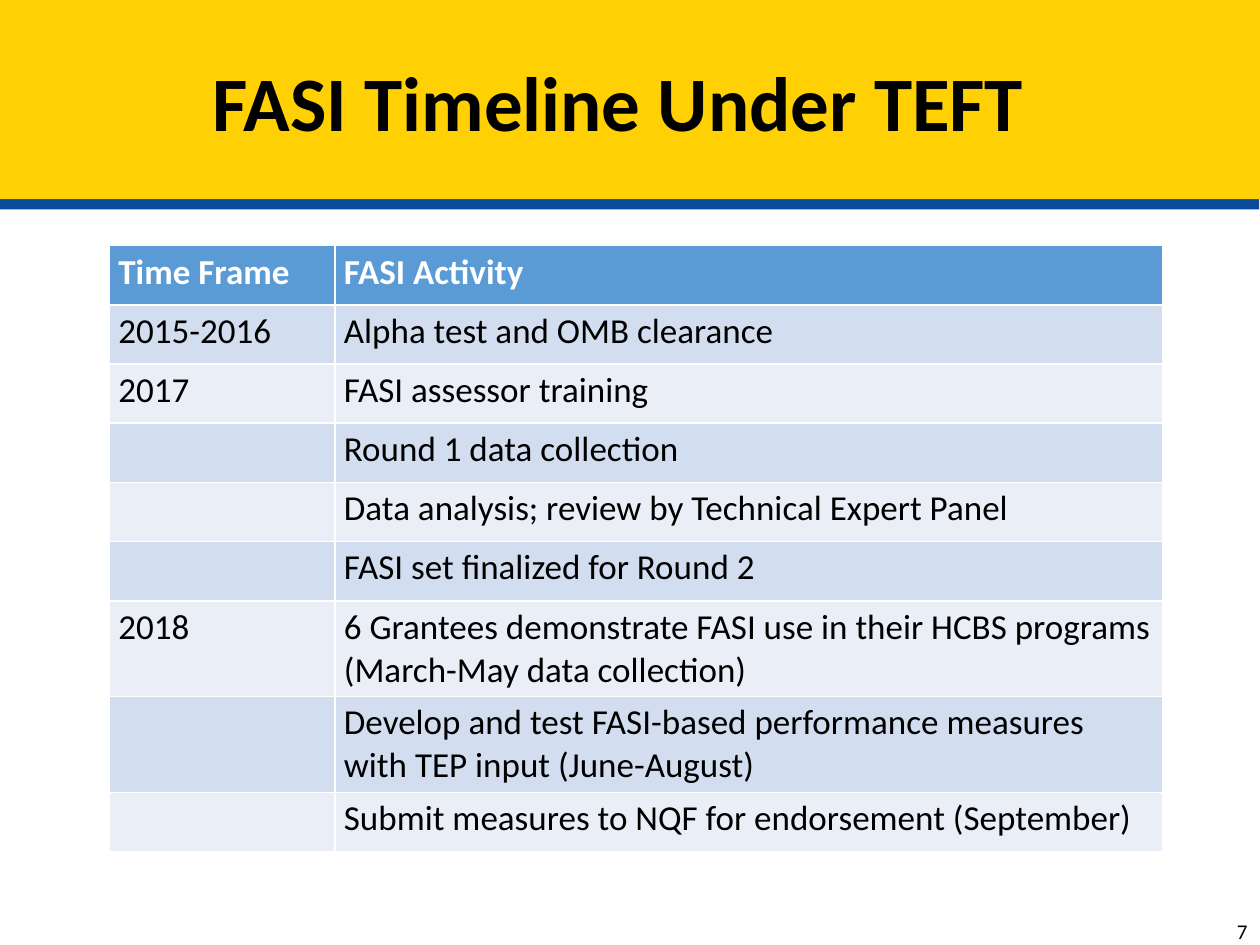
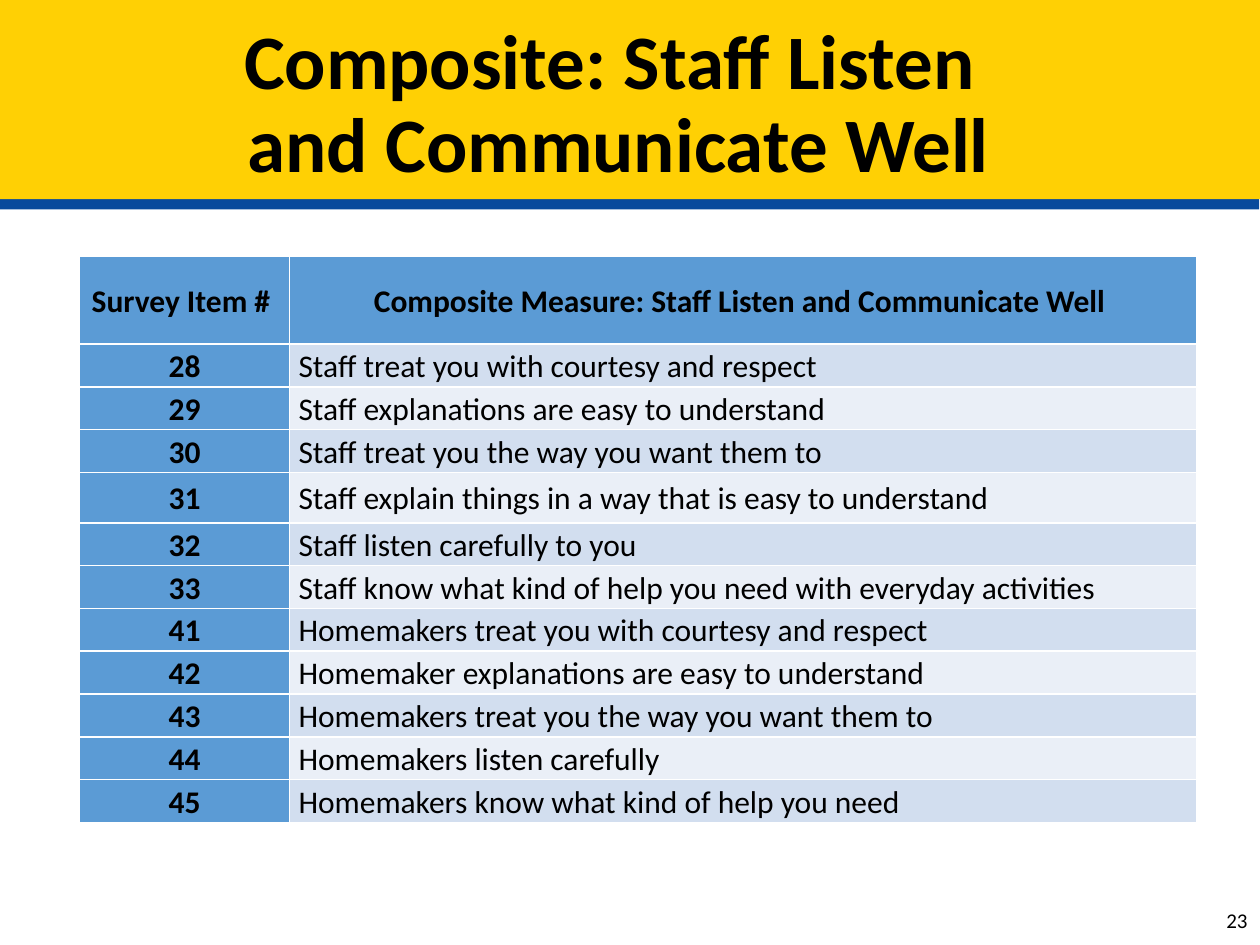
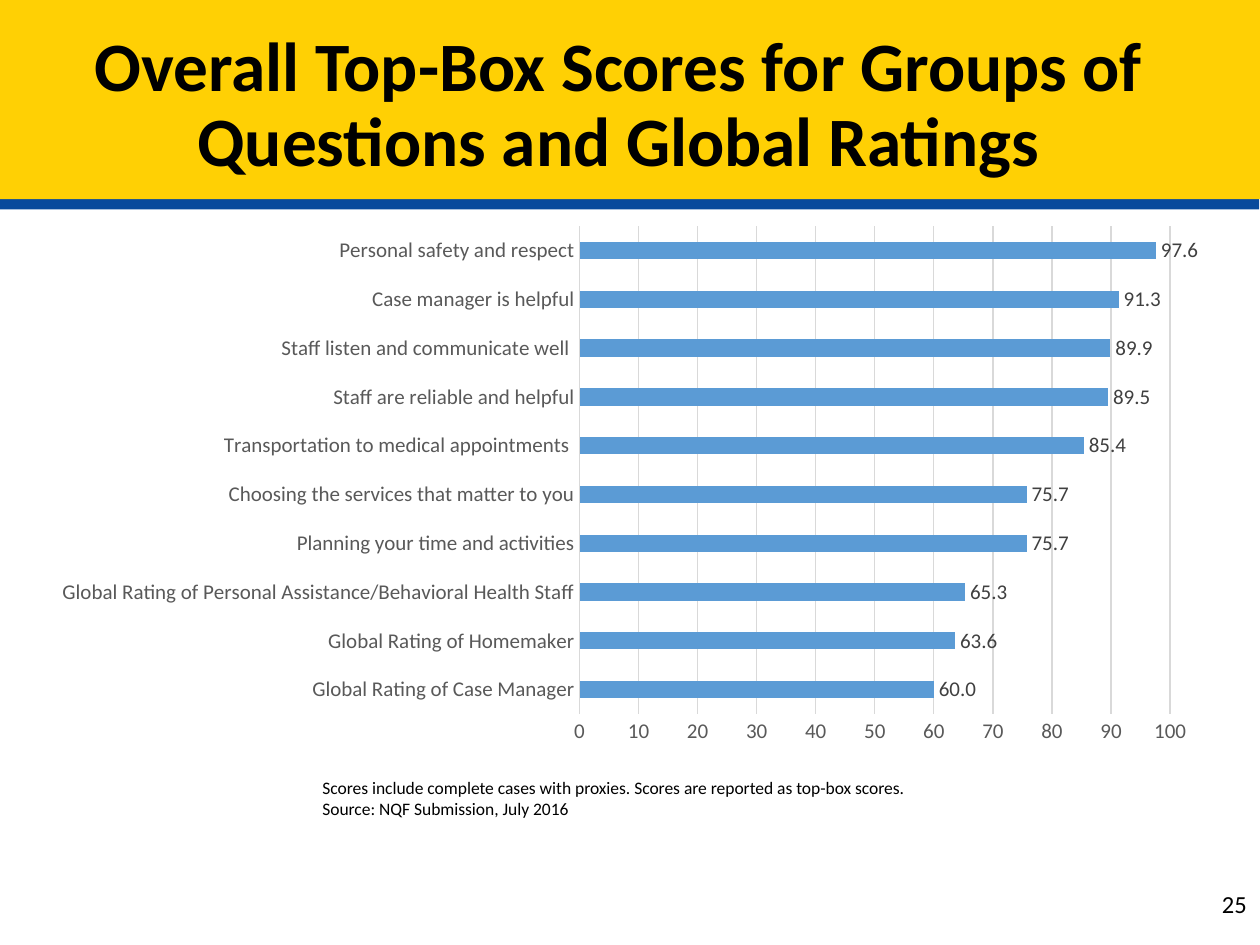
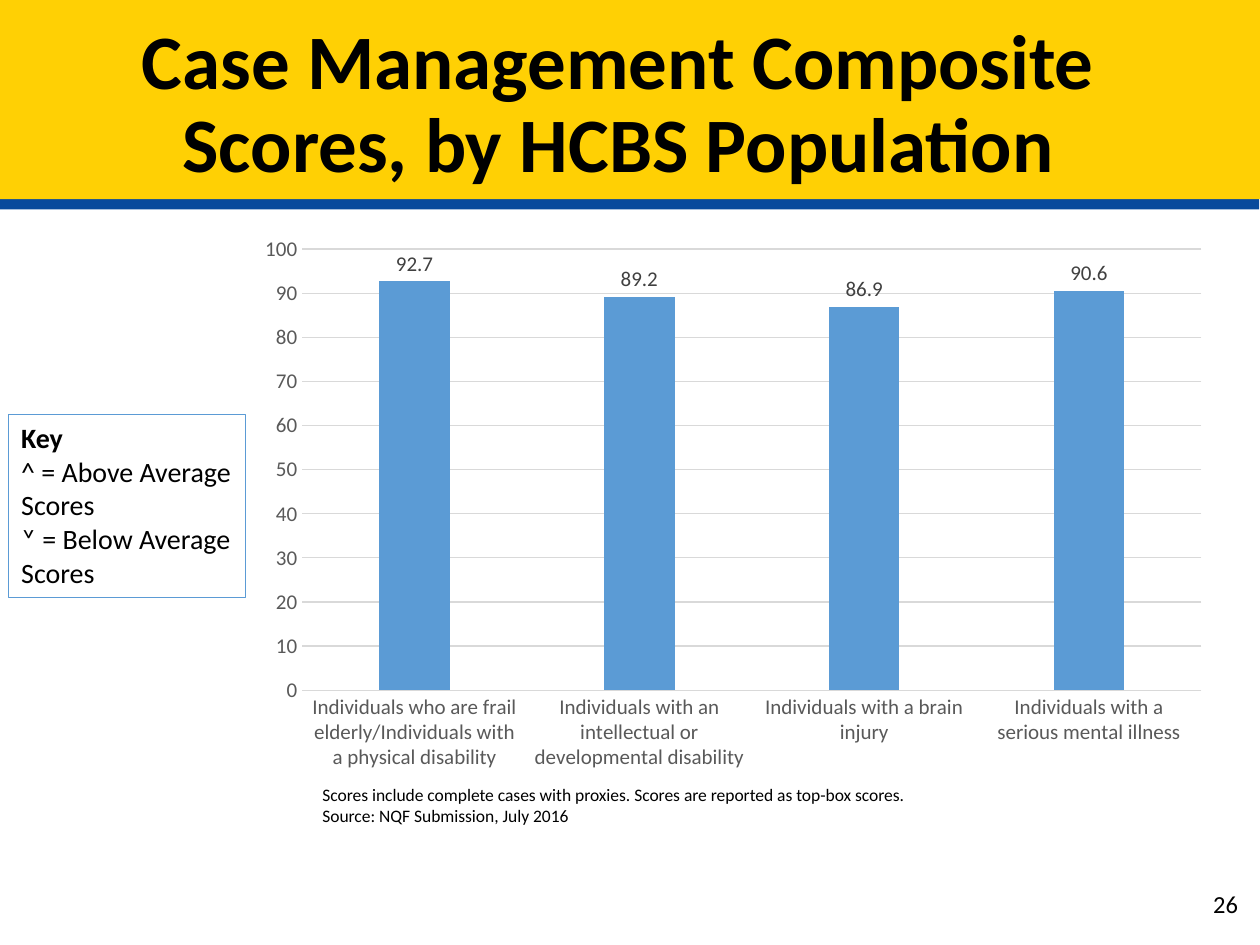
from lxml.etree import SubElement
from pptx import Presentation
from pptx.chart.data import CategoryChartData
from pptx.dml.color import RGBColor
from pptx.enum.chart import XL_CHART_TYPE as ChartType
from pptx.enum.chart import XL_LABEL_POSITION as LabelPosition
from pptx.enum.chart import XL_TICK_MARK as TickMark
from pptx.enum.shapes import MSO_SHAPE as Preset
from pptx.enum.text import MSO_ANCHOR as Anchor
from pptx.enum.text import MSO_AUTO_SIZE as AutoSize
from pptx.enum.text import PP_ALIGN as Align
from pptx.oxml.ns import qn
from pptx.util import Inches, Pt

FONT = "Calibri"
COLORS = {
    "band": "FFD004", "band_edge": "084A9C", "accent": "5B9BD5",
    "stripe_dark": "D2DEEF", "stripe_light": "EAEFF7",
    "ink": "000000", "white": "FFFFFF",
    "axis_text": "595959", "label_text": "404040", "grid": "D9D9D9",
}

TIMELINE = [
    ("Time Frame", "FASI Activity"),
    ("2015-2016", "Alpha test and OMB clearance"),
    ("2017", "FASI assessor training"),
    ("", "Round 1 data collection"),
    ("", "Data analysis; review by Technical Expert Panel"),
    ("", "FASI set finalized for Round 2"),
    ("2018", "6 Grantees demonstrate FASI use in their HCBS programs "
             "(March-May data collection)"),
    ("", "Develop and test FASI-based performance measures "
         "with TEP input (June-August)"),
    ("", "Submit measures to NQF for endorsement (September)"),
]
SURVEY_ITEMS = [
    ("Survey Item # ", "Composite Measure: Staff Listen and Communicate Well "),
    ("28", "Staff treat you with courtesy and respect"),
    ("29", "Staff explanations are easy to understand"),
    ("30", "Staff treat you the way you want them to"),
    ("31", "Staff explain things in a way that is easy to understand"),
    ("32", "Staff listen carefully to you"),
    ("33", "Staff know what kind of help you need with everyday activities"),
    ("41", "Homemakers treat you with courtesy and respect"),
    ("42", "Homemaker explanations are easy to understand"),
    ("43", "Homemakers treat you the way you want them to"),
    ("44", "Homemakers listen carefully"),
    ("45", "Homemakers know what kind of help you need"),
]
TOP_BOX_SCORES = [
    ("Global Rating of Case Manager", 60.0),
    ("Global Rating of Homemaker", 63.6),
    ("Global Rating of Personal Assistance/Behavioral Health Staff", 65.3),
    ("Planning your time and activities", 75.7),
    ("Choosing the services that matter to you", 75.7),
    ("Transportation to medical appointments ", 85.4),
    ("Staff are reliable and helpful", 89.5),
    ("Staff listen and communicate well ", 89.9),
    ("Case manager is helpful", 91.3),
    ("Personal safety and respect", 97.6),
]
POPULATION_SCORES = [
    ("Individuals who are frail elderly/Individuals with a physical disability", 92.7),
    ("Individuals with an intellectual or developmental disability", 89.2),
    ("Individuals with a brain injury", 86.9),
    ("Individuals with a serious mental illness", 90.6),
]
SCORE_NOTE = [
    "Scores include complete cases with proxies. Scores are reported as top-box scores.",
    "Source: NQF Submission, July 2016",
]
KEY = ["Key", "^ = Above Average Scores", "˅ = Below Average Scores"]


def rgb(name):
    return RGBColor.from_string(COLORS[name])


def style_font(font, size, color="ink", bold=False):
    font.name, font.size, font.bold = FONT, Pt(size), bold
    font.color.rgb = rgb(color)


def add_run(paragraph, text, size, color="ink", bold=False):
    run = paragraph.add_run()
    run.text = text
    style_font(run.font, size, color, bold)


def fill_frame(frame, lines, size, align=Align.LEFT, bold_first=False):
    for i, line in enumerate(lines):
        paragraph = frame.add_paragraph() if i else frame.paragraphs[0]
        paragraph.alignment = align
        add_run(paragraph, line, size, bold=bold_first and i == 0)


def add_text(slide, box, lines, size, wrap=True, align=Align.LEFT, anchor=Anchor.TOP):
    frame = slide.shapes.add_textbox(*map(Inches, box)).text_frame
    frame.word_wrap, frame.vertical_anchor = wrap, anchor
    fill_frame(frame, lines, size, align)


def add_band_to_layout(layout, slide):
    """Draw the title band with its hard blue edge and move it to the layout."""
    band = slide.shapes.add_shape(Preset.RECTANGLE, 0, 0, Inches(10), Inches(1.58))
    band.fill.solid()
    band.fill.fore_color.rgb = rgb("band")
    band.line.fill.background()
    band.shadow.inherit = False
    effects = band.element.spPr.find(qn("a:effectLst"))
    edge = SubElement(effects, qn("a:outerShdw"), blurRad="0", dist=str(Pt(6)),
                      dir=str(94 * 60000), algn="t", rotWithShape="0")
    SubElement(edge, qn("a:srgbClr"), val=COLORS["band_edge"])
    layout.shapes.element.insert(2, band.element)


def set_title(slide, lines, size=44):
    title = slide.shapes.title
    title.left, title.top, title.width, title.height = map(Inches, (0.6, 0.12, 8.62, 1.45))
    frame = title.text_frame
    frame.auto_size, frame.vertical_anchor = AutoSize.NONE, Anchor.MIDDLE
    paragraph = frame.paragraphs[0]
    paragraph.alignment, paragraph.line_spacing = Align.CENTER, 0.9
    for i, line in enumerate(lines):
        if i:
            paragraph.add_line_break()
        add_run(paragraph, line, size, bold=True)


def add_striped_table(slide, rows, corner, widths, heights, size, header_color="ink",
                      v_margin=0.0, anchor=Anchor.MIDDLE, spacing=None, key_column=False):
    """Add a table with striped rows; key_column styles the first column as a heading."""
    box = (*corner, sum(widths), sum(heights))
    table = slide.shapes.add_table(len(rows), len(widths), *map(Inches, box)).table
    table.first_col = key_column
    for column, width in zip(table.columns, widths):
        column.width = Inches(width)
    for r, (row, height) in enumerate(zip(rows, heights)):
        table.rows[r].height = Inches(height)
        for c, text in enumerate(row):
            cell = table.cell(r, c)
            heading = r == 0 or (key_column and c == 0)
            stripe = "stripe_dark" if r % 2 else "stripe_light"
            cell.fill.solid()
            cell.fill.fore_color.rgb = rgb("accent" if heading else stripe)
            cell.vertical_anchor = anchor
            cell.margin_left = cell.margin_right = Inches(0.07)
            cell.margin_top = cell.margin_bottom = Inches(v_margin)
            paragraph = cell.text_frame.paragraphs[0]
            paragraph.line_spacing = spacing
            paragraph.alignment = Align.CENTER if heading and key_column else Align.LEFT
            if text:
                add_run(paragraph, text, size, header_color if r == 0 else "ink", heading)


def add_score_chart(slide, kind, scores, box, gap, overlap=0):
    data = CategoryChartData(number_format="0.0")
    data.categories = [category for category, _ in scores]
    data.add_series("Series 1", [score for _, score in scores])
    chart = slide.shapes.add_chart(kind, *map(Inches, box), data).chart
    chart.has_legend = chart.has_title = False
    style_font(chart.font, 10)

    categories, values = chart.category_axis, chart.value_axis
    for axis in (categories, values):
        axis.major_tick_mark = axis.minor_tick_mark = TickMark.NONE
        style_font(axis.tick_labels.font, 12, "axis_text")
    values.minimum_scale, values.maximum_scale, values.major_unit = 0, 100, 10
    values.tick_labels.number_format = "0"
    values.tick_labels.number_format_is_linked = False
    values.format.line.fill.background()
    values.has_major_gridlines = True
    for line in (categories.format.line, values.major_gridlines.format.line):
        line.color.rgb, line.width = rgb("grid"), Pt(0.75)

    plot = chart.plots[0]
    plot.gap_width, plot.overlap, plot.vary_by_categories = gap, overlap, False
    bars = plot.series[0]
    bars.format.fill.solid()
    bars.format.fill.fore_color.rgb = rgb("accent")
    labels = bars.data_labels
    labels.show_value, labels.position = True, LabelPosition.OUTSIDE_END
    labels.number_format, labels.number_format_is_linked = "0.0", False
    style_font(labels.font, 12, "label_text")


def add_key(slide):
    key = slide.shapes.add_shape(Preset.RECTANGLE, *map(Inches, (0.07, 3.29, 1.88, 1.45)))
    key.shadow.inherit = False
    key.fill.background()
    key.line.color.rgb, key.line.width = rgb("accent"), Pt(0.75)
    frame = key.text_frame
    frame.word_wrap, frame.vertical_anchor = True, Anchor.TOP
    fill_frame(frame, KEY, 16, bold_first=True)


def add_score_note(slide, top):
    add_text(slide, (2.46, top, 4.91, 0.44), SCORE_NOTE, 10, wrap=False)


def add_corner_number(slide, number, top):
    add_text(slide, (7.75, top, 2.25, 0.4), [number], 12,
             align=Align.RIGHT, anchor=Anchor.MIDDLE)


def main():
    deck = Presentation()
    deck.slide_width, deck.slide_height = Inches(10), Inches(7.5)
    layout = deck.slide_layouts[5]
    timeline, composite, top_box, population = (
        deck.slides.add_slide(layout) for _ in range(4))
    add_band_to_layout(layout, timeline)

    set_title(timeline, ["FASI Timeline Under TEFT"])
    add_striped_table(timeline, TIMELINE, (0.87, 1.95), (1.79, 6.57),
                      [0.47] * len(TIMELINE), 20, header_color="white",
                      v_margin=0.04, anchor=Anchor.TOP)
    add_corner_number(timeline, "7", 7.19)

    set_title(composite, ["Composite: Staff Listen ", "and Communicate Well"])
    item_heights = [0.4 if item == "31" else 0.34 for item, _ in SURVEY_ITEMS[1:]]
    add_striped_table(composite, SURVEY_ITEMS, (0.63, 2.03), (1.67, 7.2),
                      [0.7] + item_heights, 18, spacing=1.07, key_column=True)
    add_corner_number(composite, "23", 7.1)

    set_title(top_box, ["Overall Top-Box Scores for Groups of Questions and Global Ratings"], 39.6)
    add_score_chart(top_box, ChartType.BAR_CLUSTERED, TOP_BOX_SCORES,
                    (0.31, 1.71, 9.29, 4.28), gap=182)
    add_score_note(top_box, 6.12)
    add_text(top_box, (9.6, 7.01, 0.4, 0.34), ["25"], 14, wrap=False)

    set_title(population, ["Case Management Composite Scores, by HCBS Population"])
    add_score_chart(population, ChartType.COLUMN_CLUSTERED, POPULATION_SCORES,
                    (1.95, 1.79, 7.74, 4.41), gap=219, overlap=-27)
    add_key(population)
    add_score_note(population, 6.17)
    add_text(population, (9.53, 7.01, 0.72, 0.34), ["26"], 14)

    deck.save("out.pptx")


if __name__ == "__main__":
    main()
